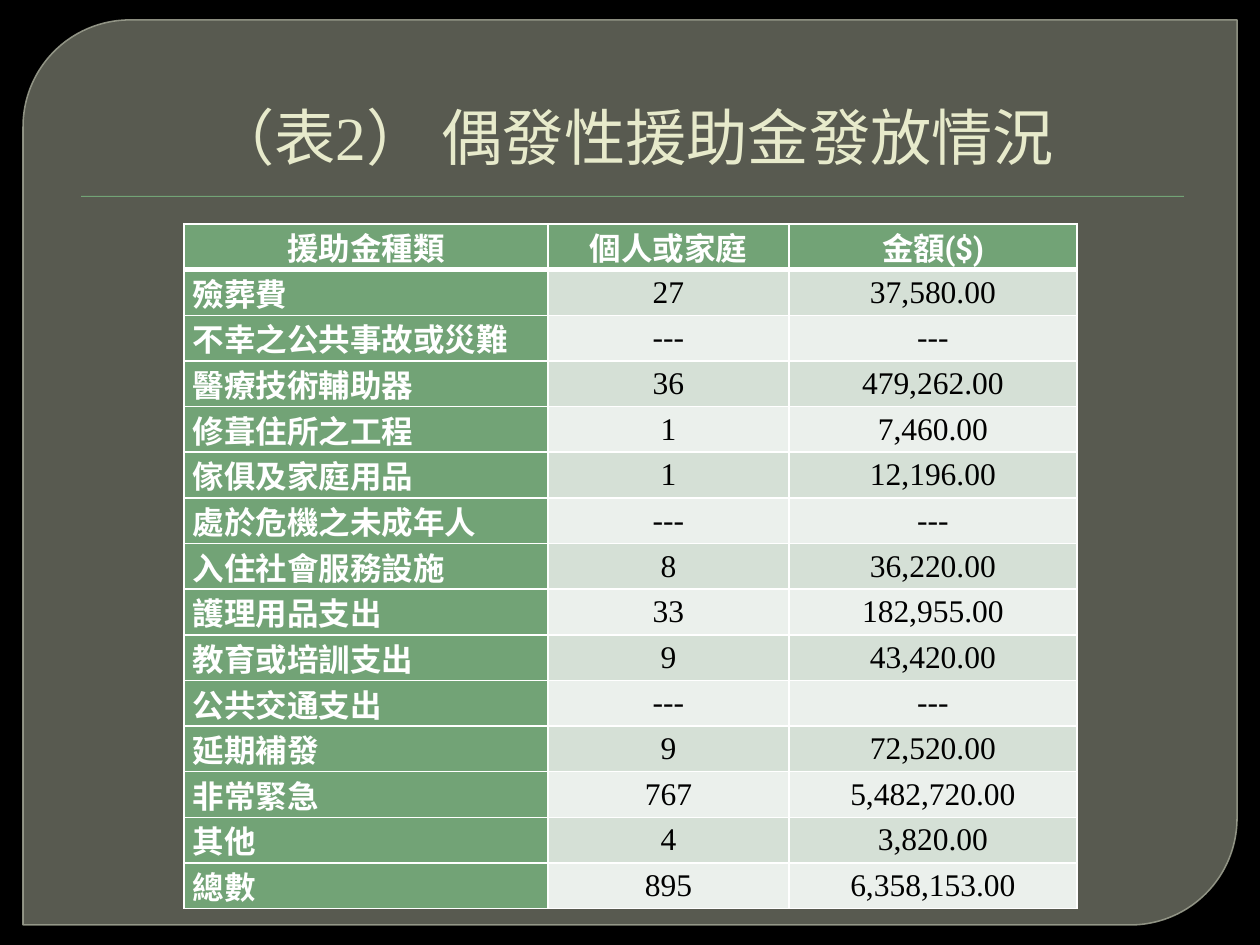
import pptx
import pptx.dml.color
import pptx.enum.shapes
import pptx.enum.text
import pptx.oxml
import pptx.oxml.ns
import pptx.util

EMU_PER_PX = 914400 / 126

COLORS = {
    "background": "000000",
    "panel": "888B7B",
    "panel_line": "9DA090",
    "green": "72A376",
    "title": "E7EACB",
    "white": "FFFFFF",
    "black": "000000",
    "band_dark": "D5E0D6",
    "band_light": "EBF0EC",
}

TITLE_FORMAT = {"name": "Times New Roman", "size": pptx.util.Pt(35), "color": "title"}
LABEL_FORMAT = {"name": "Roboto Slab", "size": pptx.util.Pt(18), "bold": True, "color": "white"}
VALUE_FORMAT = {"name": "Times New Roman", "size": pptx.util.Pt(18), "bold": False, "color": "black"}

COLUMN_WIDTHS = [364, 241, 288]
TABLE_HEIGHT = 685
AID_ROWS = [
    ("援助金種類", "個人或家庭", "金額($)"),
    ("殮葬費", "27", "37,580.00"),
    ("不幸之公共事故或災難", "---", "---"),
    ("醫療技術輔助器", "36", "479,262.00"),
    ("修葺住所之工程", "1", "7,460.00"),
    ("傢俱及家庭用品", "1", "12,196.00"),
    ("處於危機之未成年人", "---", "---"),
    ("入住社會服務設施", "8", "36,220.00"),
    ("護理用品支出", "33", "182,955.00"),
    ("教育或培訓支出", "9", "43,420.00"),
    ("公共交通支出", "---", "---"),
    ("延期補發", "9", "72,520.00"),
    ("非常緊急", "767", "5,482,720.00"),
    ("其他", "4", "3,820.00"),
    ("總數", "895", "6,358,153.00"),
]


def px(length):
    return pptx.util.Emu(round(length * EMU_PER_PX))


def rgb(name):
    return pptx.dml.color.RGBColor.from_string(COLORS[name])


def set_attributes(target, values):
    for name, value in values.items():
        setattr(target, name, value)


def paint(fill, color):
    fill.solid()
    fill.fore_color.rgb = rgb(color)


def set_opacity(properties, percent):
    color = properties.find(".//" + pptx.oxml.ns.qn("a:srgbClr"))
    color.append(pptx.oxml.parse_xml(
        f'<a:alpha {pptx.oxml.ns.nsdecls("a")} val="{percent * 1000}"/>'))


def write_text(paragraph, text, text_format, alignment):
    paragraph.alignment = alignment
    run = paragraph.add_run()
    run.text = text
    values = dict(text_format)
    run.font.color.rgb = rgb(values.pop("color"))
    set_attributes(run.font, values)


def add_filled_shape(slide, kind, box, color):
    shape = slide.shapes.add_shape(kind, *map(px, box))
    shape.shadow.inherit = False
    paint(shape.fill, color)
    shape.line.fill.background()
    return shape


def add_panel(slide):
    kind = pptx.enum.shapes.MSO_SHAPE.ROUND_2_DIAG_RECTANGLE
    panel = add_filled_shape(slide, kind, (23, 20, 1214, 905), "panel")
    panel.adjustments[0] = 0.118
    panel.adjustments[1] = 0
    set_opacity(panel.fill._xPr.find(pptx.oxml.ns.qn("a:solidFill")), 65)
    paint(panel.line.fill, "panel_line")
    panel.line.width = pptx.util.Pt(0.87)
    set_opacity(panel.line._ln, 88)


def add_title(slide, text):
    box = slide.shapes.add_textbox(*map(px, (63, 96, 1134, 77)))
    set_attributes(box.text_frame, {
        "word_wrap": True,
        "vertical_anchor": pptx.enum.text.MSO_ANCHOR.BOTTOM,
        "margin_left": px(8),
        "margin_right": 0,
        "margin_top": 0,
        "margin_bottom": 0,
    })
    write_text(box.text_frame.paragraphs[0], text, TITLE_FORMAT, pptx.enum.text.PP_ALIGN.CENTER)


def set_borders(cell, widths):
    properties = cell._tc.get_or_add_tcPr()
    for position, (side, width) in enumerate(widths.items()):
        properties.insert(position, pptx.oxml.parse_xml(
            f'<a:ln{side} {pptx.oxml.ns.nsdecls("a")} w="{pptx.util.Pt(width)}">'
            f'<a:solidFill><a:srgbClr val="{COLORS["white"]}"/></a:solidFill>'
            f'<a:prstDash val="solid"/></a:ln{side}>'))


def fill_cell(cell, text, row, column):
    is_label = row == 0 or column == 0
    is_left = row > 0 and column == 0
    alignment = pptx.enum.text.PP_ALIGN.LEFT if is_left else pptx.enum.text.PP_ALIGN.CENTER
    band = "band_dark" if row % 2 else "band_light"
    set_attributes(cell, {
        "vertical_anchor": pptx.enum.text.MSO_ANCHOR.MIDDLE,
        "margin_left": px(9),
        "margin_right": px(9),
        "margin_top": 0,
        "margin_bottom": 0,
    })
    paint(cell.fill, "green" if is_label else band)
    write_text(cell.text_frame.paragraphs[0], text,
               LABEL_FORMAT if is_label else VALUE_FORMAT, alignment)
    set_borders(cell, {"L": 1, "R": 1, "T": 3 if row == 1 else 1, "B": 3 if row == 0 else 1})


def add_aid_table(slide):
    box = (184, 224, sum(COLUMN_WIDTHS), TABLE_HEIGHT)
    frame = slide.shapes.add_table(len(AID_ROWS), len(COLUMN_WIDTHS), *map(px, box))
    table = frame.table
    set_attributes(table, {"first_row": False, "horz_banding": False})
    for column, width in zip(table.columns, COLUMN_WIDTHS):
        column.width = px(width)
    for row_index, texts in enumerate(AID_ROWS):
        table.rows[row_index].height = px(TABLE_HEIGHT / len(AID_ROWS))
        for column_index, text in enumerate(texts):
            fill_cell(table.cell(row_index, column_index), text, row_index, column_index)


def main():
    presentation = pptx.Presentation()
    set_attributes(presentation, {"slide_width": px(1260), "slide_height": px(945)})
    slide = presentation.slides.add_slide(presentation.slide_layouts[6])
    paint(slide.background.fill, "background")
    add_panel(slide)
    add_filled_shape(slide, pptx.enum.shapes.MSO_SHAPE.RECTANGLE, (81, 196, 1103, 1), "green")
    add_title(slide, "（表2） 偶發性援助金發放情況")
    add_aid_table(slide)
    presentation.save("out.pptx")


if __name__ == "__main__":
    main()
